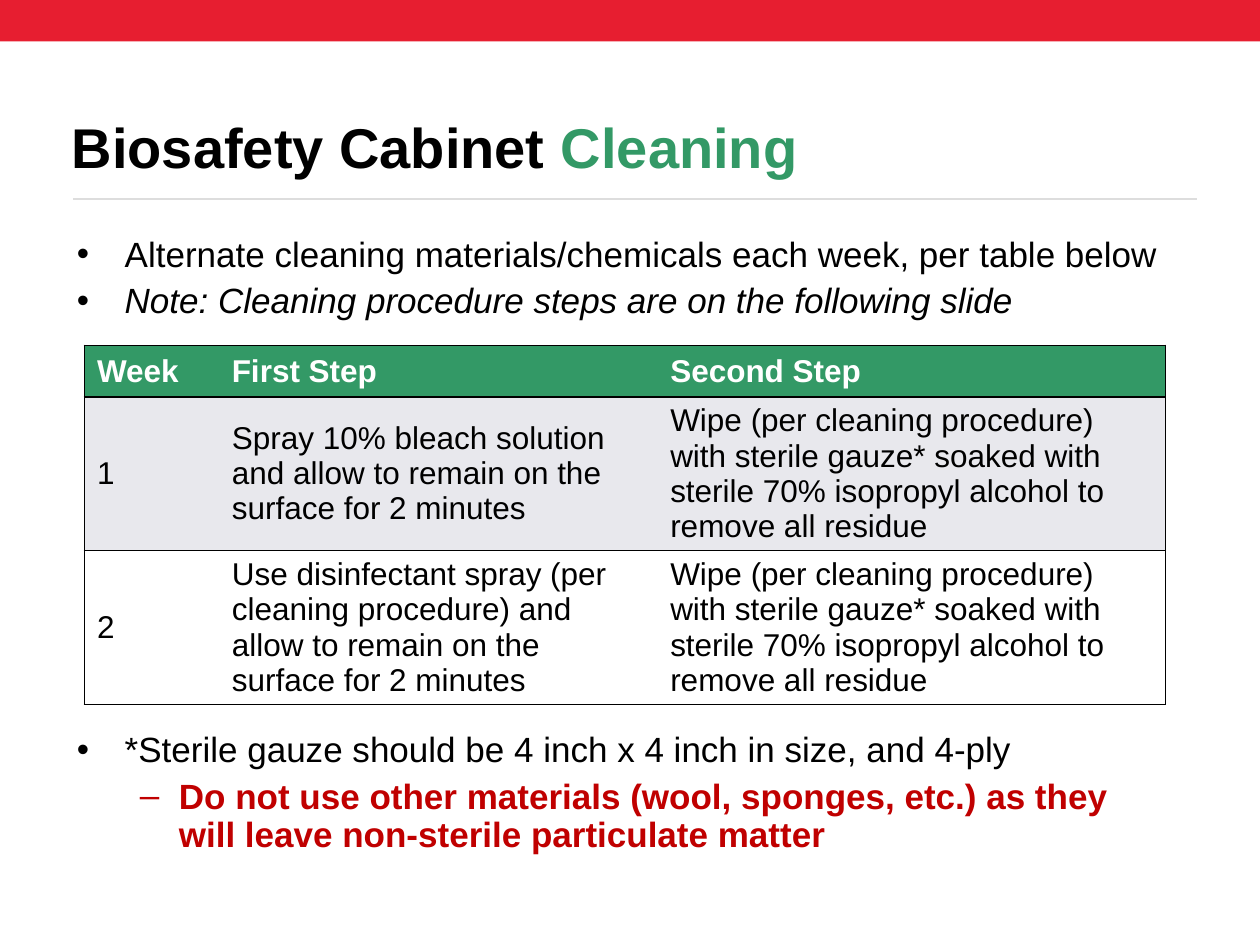
from lxml import etree
from pptx import Presentation
from pptx import util as u
from pptx.dml.color import RGBColor
from pptx.enum import shapes, text
from pptx.oxml.ns import qn

COLORS = {"bar": "E71E30", "rule": "DDDDDD", "ink": "000000", "green": "339966",
          "band": "E8E8ED", "white": "FFFFFF", "warning": "C00000"}


def add_run(paragraph, wording, size, color="ink", bold=False, italic=False):
    run = paragraph.add_run()
    run.text = wording
    run.font.name, run.font.size = "Arial", u.Pt(size)
    run.font.bold, run.font.italic = bold, italic
    run.font.color.rgb = RGBColor.from_string(COLORS[color])


def set_border(cell, side, visible):
    """Draw one side (L, R, T or B) as a 1 pt black line, or hide it."""
    props = cell._tc.get_or_add_tcPr()
    edge = etree.SubElement(props, qn(f"a:ln{side}"), w=str(u.Pt(1)))
    if visible:
        fill = etree.SubElement(edge, qn("a:solidFill"))
        etree.SubElement(fill, qn("a:srgbClr"), val=COLORS["ink"])
    else:
        etree.SubElement(edge, qn("a:noFill"))


prs = Presentation()
prs.slide_width, prs.slide_height = u.Inches(10), u.Inches(7.5)
slide = prs.slides.add_slide(prs.slide_layouts[1])

# Top bar and the rule under the title
bar = slide.shapes.add_shape(shapes.MSO_SHAPE.RECTANGLE, 0, 0, prs.slide_width, u.Inches(0.33))
bar.shadow.inherit = False
bar.fill.solid()
bar.fill.fore_color.rgb = RGBColor.from_string(COLORS["bar"])
bar.line.fill.background()

rule = slide.shapes.add_connector(shapes.MSO_CONNECTOR.STRAIGHT, u.Inches(0.58), u.Inches(1.58),
                                  u.Inches(9.5), u.Inches(1.58))
rule.line.color.rgb = RGBColor.from_string(COLORS["rule"])
rule.line.width = u.Pt(0.75)
etree.SubElement(rule._element.spPr, qn("a:effectLst"))

# Title
title = slide.shapes.title
title.left, title.top, title.width, title.height = map(u.Inches, (0.47, 0.83, 9.03, 0.75))
title.text_frame.auto_size = text.MSO_AUTO_SIZE.NONE
title.text_frame.vertical_anchor = text.MSO_ANCHOR.MIDDLE
heading = title.text_frame.paragraphs[0]
heading.alignment = text.PP_ALIGN.LEFT
heading.line_spacing = 0.85
add_run(heading, "Biosafety Cabinet ", 32, bold=True)
add_run(heading, "Cleaning", 32, "green", bold=True)

# Bullets above and below the table: wording, level, space before, run format
TABLE_GAP = 235
bullets = [
    ("Alternate cleaning materials/chemicals each week, per table below", 0, 0, {}),
    ("Note: Cleaning procedure steps are on the following slide", 0, 5, {"italic": True}),
    ("*Sterile gauze should be 4 inch x 4 inch in size, and 4-ply", 0, TABLE_GAP, {}),
    ("Do not use other materials (wool, sponges, etc.) as they will leave "
     "non-sterile particulate matter", 1, 5, {"color": "warning", "bold": True}),
]
LEVELS = [("•", 0.38, -0.38), ("–", 0.81, -0.31)]
body = slide.placeholders[1]
body.left, body.top, body.width, body.height = map(u.Inches, (0.51, 1.83, 8.83, 5.33))
body.text_frame.auto_size = text.MSO_AUTO_SIZE.NONE
for index, (wording, level, gap, look) in enumerate(bullets):
    item = body.text_frame.paragraphs[0] if index == 0 else body.text_frame.add_paragraph()
    mark, margin, indent = LEVELS[level]
    item.level = level
    item.line_spacing = 0.9
    item.space_before = u.Pt(gap)
    props = item._p.get_or_add_pPr()
    props.set("marL", str(u.Inches(margin)))
    props.set("indent", str(u.Inches(indent)))
    etree.SubElement(props, qn("a:buFont"), typeface="Arial")
    etree.SubElement(props, qn("a:buChar"), char=mark)
    add_run(item, wording, 20, **look)

# Weekly schedule
wipe = ("Wipe (per cleaning procedure) with sterile gauze* soaked with "
        "sterile 70% isopropyl alcohol to remove all residue")
schedule = [
    ("Week", "First Step", "Second Step"),
    ("1", "Spray 10% bleach solution and allow to remain on the surface for 2 minutes", wipe),
    ("2", "Use disinfectant spray (per cleaning procedure) and allow to remain on the "
          "surface for 2 minutes", wipe),
]
col_widths = [1.07, 3.48, 4.03]
row_heights = [0.41, 1.22, 1.22]
row_fills = ["green", "band", "white"]
table = slide.shapes.add_table(3, 3, u.Inches(0.67), u.Inches(2.74),
                               u.Inches(sum(col_widths)), u.Inches(sum(row_heights))).table
for column, width in zip(table.columns, col_widths):
    column.width = u.Inches(width)
for r, steps in enumerate(schedule):
    table.rows[r].height = u.Inches(row_heights[r])
    for c, wording in enumerate(steps):
        cell = table.cell(r, c)
        cell.vertical_anchor = text.MSO_ANCHOR.MIDDLE
        for side, visible in (("L", c == 0), ("R", c == 2), ("T", True), ("B", True)):
            set_border(cell, side, visible)
        cell.fill.solid()
        cell.fill.fore_color.rgb = RGBColor.from_string(COLORS[row_fills[r]])
        add_run(cell.text_frame.paragraphs[0], wording, 18,
                "white" if r == 0 else "ink", bold=r == 0)

prs.save("out.pptx")
